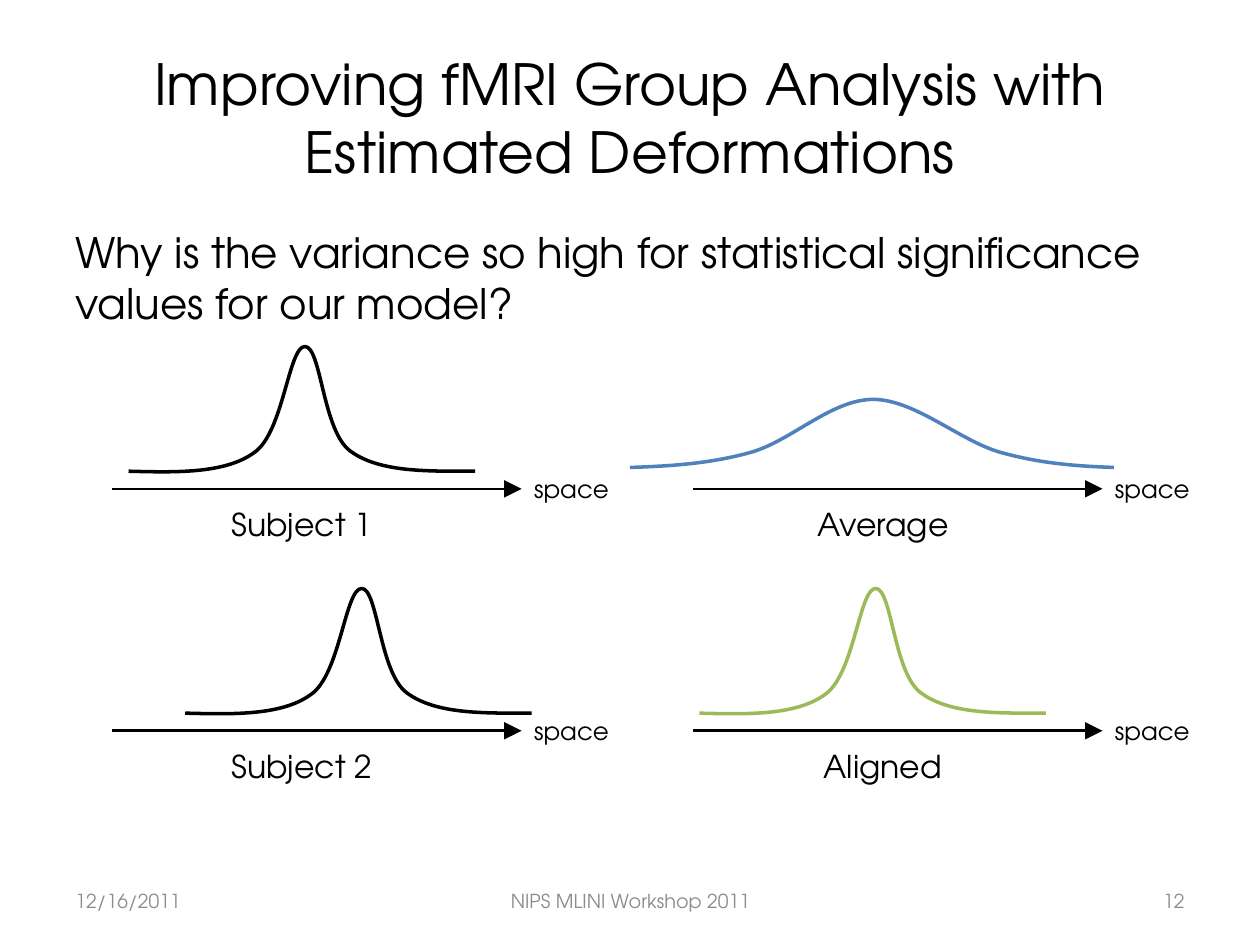
from pptx import Presentation
from pptx.dml.color import RGBColor
from pptx.enum.shapes import MSO_CONNECTOR
from pptx.enum.text import MSO_ANCHOR as ANCHOR, MSO_AUTO_SIZE as FIT, PP_ALIGN as ALIGN
from pptx.oxml.ns import qn
from pptx.util import Pt
from lxml.etree import SubElement

PX = 9144  # EMU in one px, 100 px to the inch
FONT = "TeX Gyre Adventor"
COLORS = {"text": "000000", "footer": "8C8C8C", "average": "4F81BD", "aligned": "9BBB59"}

# Bezier points as (x, y) from the left end of each curve
NARROW = [(0, 0), (38, 1), (77, 2), (100, -15), (123, -31), (127, -99), (140, -99),
          (153, -99), (154, -32), (176, -16), (199, 1), (237, 0), (275, 0)]
WIDE = [(0, 0), (32, -1), (64, -3), (96, -12), (128, -21), (160, -54), (193, -54),
        (226, -54), (262, -21), (294, -12), (326, -3), (355, -1), (384, 0)]


def lines_to_beziers(sp):
    """Turn each three line segments of a freeform into one cubic Bezier."""
    path = next(sp._element.iter(qn("a:path")))
    lines = path.findall(qn("a:lnTo"))
    for i in range(0, len(lines), 3):
        bezier = SubElement(path, qn("a:cubicBezTo"))
        for line in lines[i:i + 3]:
            bezier.append(line[0])
            path.remove(line)


class Slide:
    def __init__(self, prs):
        self.s = prs.slides.add_slide(prs.slide_layouts[6])

    def text(self, text, box, size, align=ALIGN.LEFT, anchor=ANCHOR.TOP,
             color="text", wrap=True):
        sp = self.s.shapes.add_textbox(*(v * PX for v in box))
        tf = sp.text_frame
        frame = {"word_wrap": wrap, "vertical_anchor": anchor,
                 "auto_size": FIT.NONE if wrap else FIT.SHAPE_TO_FIT_TEXT}
        for name, value in frame.items():
            setattr(tf, name, value)
        p = tf.paragraphs[0]
        p.alignment = align
        r = p.add_run()
        r.text = text
        for name, value in {"name": FONT, "size": Pt(size)}.items():
            setattr(r.font, name, value)
        r.font.color.rgb = RGBColor.from_string(COLORS[color])
        return sp

    def line_style(self, sp, color, width):
        sp.line.color.rgb = RGBColor.from_string(COLORS[color])
        sp.line.width = Pt(width)

    def axis(self, x, y, target):
        """Draw an arrow from x, y to the left side of the target."""
        line = self.s.shapes.add_connector(
            MSO_CONNECTOR.STRAIGHT, x * PX, y * PX, (x + 325) * PX, y * PX)
        line.end_connect(target, 1)
        self.line_style(line, "text", 1.5)
        SubElement(line.line._get_or_add_ln(), qn("a:tailEnd"),
                   type="triangle", w="lg", len="lg")
        SubElement(line._element.spPr, qn("a:effectLst"))

    def curve(self, x, y, points, color):
        start, *rest = [((x + dx) * PX, (y + dy) * PX) for dx, dy in points]
        builder = self.s.shapes.build_freeform(*start, scale=1.0)
        builder.add_line_segments(rest, close=False)
        sp = builder.convert_to_shape()
        lines_to_beziers(sp)
        sp.shadow.inherit = False
        sp.fill.background()
        self.line_style(sp, color, 2)

    def plot(self, left, axis_y, label, label_x, label_w, curve):
        space = self.text("space", (left + 325, axis_y - 17, 80, 34), 14, wrap=False)
        self.axis(left, axis_y, space)
        self.text(label, (label_x, axis_y + 8, label_w, 40), 18, ALIGN.CENTER, wrap=False)
        self.curve(*curve)


def main():
    prs = Presentation()
    prs.slide_width, prs.slide_height = 1000 * PX, 750 * PX
    slide = Slide(prs)
    slide.text("Improving fMRI Group Analysis with Estimated Deformations",
               (50, 30, 900, 125), 32.4, ALIGN.CENTER, ANCHOR.MIDDLE)
    slide.text("Why is the variance so high for statistical significance values for our model?",
               (50, 175, 900, 495), 24)

    left, right = 89, 550
    top, bottom = 388, 580
    plots = [
        (left, top, "Subject 1", 173, 133, (102, 374, NARROW, "text")),
        (left, bottom, "Subject 2", 173, 133, (147, 566, NARROW, "text")),
        (right, top, "Average", 637, 128, (500, 371, WIDE, "average")),
        (right, bottom, "Aligned", 643, 115, (555, 566, NARROW, "aligned")),
    ]
    for plot in plots:
        slide.plot(*plot)

    footers = [("12/16/2011", 50, 233, ALIGN.LEFT),
               ("NIPS MLINI Workshop 2011", 342, 317, ALIGN.CENTER),
               ("12", 717, 233, ALIGN.RIGHT)]
    for text, x, width, align in footers:
        slide.text(text, (x, 695, width, 40), 11, align, ANCHOR.MIDDLE, "footer")
    prs.save("out.pptx")


if __name__ == "__main__":
    main()
